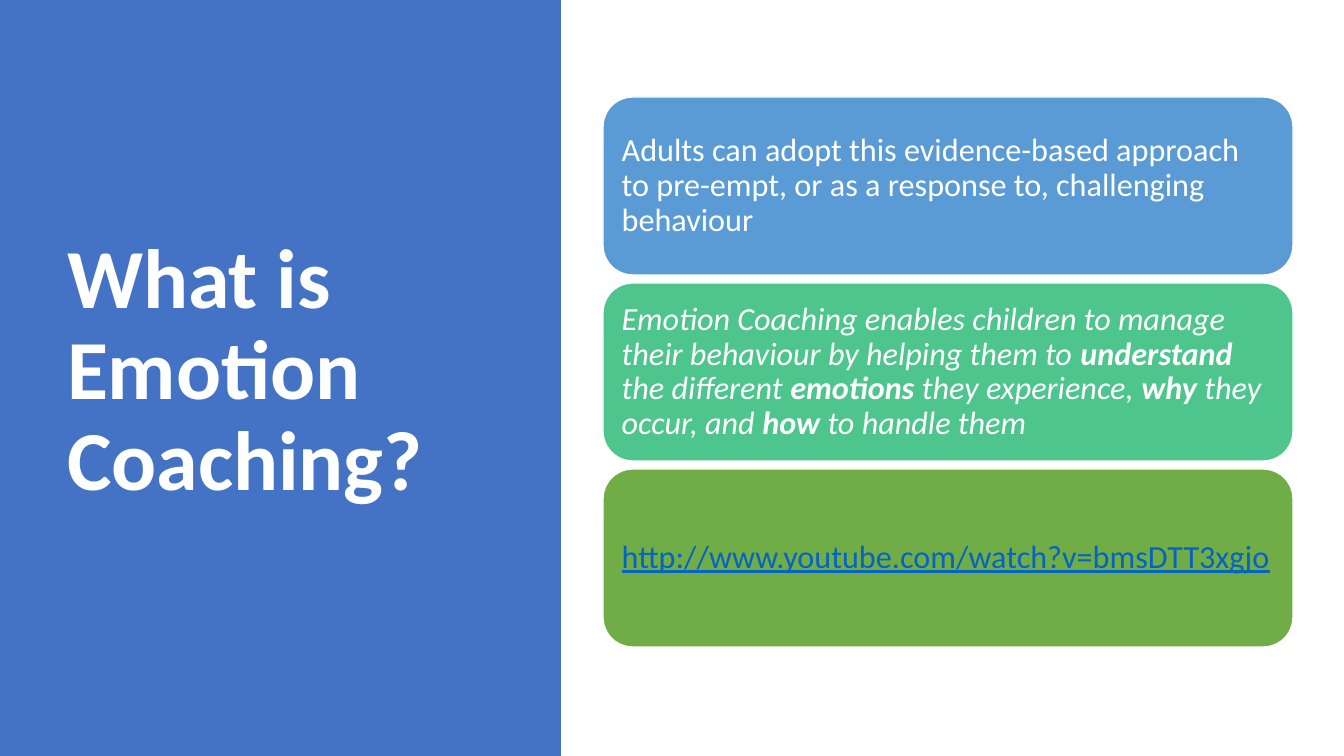
"""Build the slide that explains what Emotion Coaching is."""
from pptx import Presentation, util as u
from pptx.dml.color import RGBColor
from pptx.enum import shapes, text

PX = 12192000 / 1344
COLOURS = {
    "panel": "4472C4",
    "approach": "5B9BD5",
    "benefits": "4DC58D",
    "video": "70AD47",
    "link": "0563C1",
    "white": "FFFFFF",
}
CARD_TOP, CARD_STEP = 97, 186
CARDS = [
    ("approach", "white", False, [
        ("Adults can adopt this evidence-based approach to pre-empt, "
         "or as a response to, challenging behaviour", False),
    ]),
    ("benefits", "white", True, [
        ("Emotion Coaching enables children to manage their behaviour "
         "by helping them to ", False),
        ("understand", True),
        (" the different", False),
        (" emotions", True),
        (" they experience, ", False),
        ("why ", True),
        ("they occur, and ", False),
        ("how ", True),
        ("to handle them", False),
    ]),
    ("video", "link", False, [
        ("http://www.youtube.com/watch?v=bmsDTT3xgjo", False),
    ]),
]


def px(*lengths):
    return [u.Emu(round(length * PX)) for length in lengths]


def style(paragraph, size, colour):
    paragraph.alignment = text.PP_ALIGN.LEFT
    paragraph.line_spacing = 0.9
    paragraph.font.name = "Calibri"
    paragraph.font.size = u.Pt(size)
    paragraph.font.color.rgb = RGBColor.from_string(COLOURS[colour])


deck = Presentation()
deck.slide_width, deck.slide_height = px(1344, 756)
slide = deck.slides.add_slide(deck.slide_layouts[5])

panel = slide.shapes.add_shape(shapes.MSO_SHAPE.RECTANGLE, *px(0, 0, 561, 756))
panel.shadow.inherit = False
panel.fill.solid()
panel.fill.fore_color.rgb = RGBColor.from_string(COLOURS["panel"])
panel.line.fill.background()

question = slide.shapes.title
panel._element.addnext(question._element)
question.left, question.top, question.width, question.height = px(57, 69, 419, 607)
question.text_frame.text = "What is Emotion Coaching?"
question.text_frame.word_wrap = True
question.text_frame.auto_size = text.MSO_AUTO_SIZE.NONE
question.text_frame.vertical_anchor = text.MSO_ANCHOR.MIDDLE
style(question.text_frame.paragraphs[0], 60, "white")
question.text_frame.paragraphs[0].font.bold = True

for row, (fill, colour, italic, phrases) in enumerate(CARDS):
    card = slide.shapes.add_shape(
        shapes.MSO_SHAPE.ROUNDED_RECTANGLE,
        *px(603, CARD_TOP + row * CARD_STEP, 690, 178))
    card.shadow.inherit = False
    card.fill.solid()
    card.fill.fore_color.rgb = RGBColor.from_string(COLOURS[fill])
    card.line.color.rgb = RGBColor.from_string(COLOURS["white"])
    card.line.width = u.Pt(1)

    frame = card.text_frame
    frame.word_wrap = True
    frame.vertical_anchor = text.MSO_ANCHOR.MIDDLE
    frame.margin_left, frame.margin_top, frame.margin_right, frame.margin_bottom = px(10, 10, 10, 10)
    message = frame.paragraphs[0]
    style(message, 23, colour)
    message.font.italic = italic
    message.font.underline = colour == "link"
    for words, bold in phrases:
        phrase = message.add_run()
        phrase.text = words
        phrase.font.bold = bold

deck.save("out.pptx")
